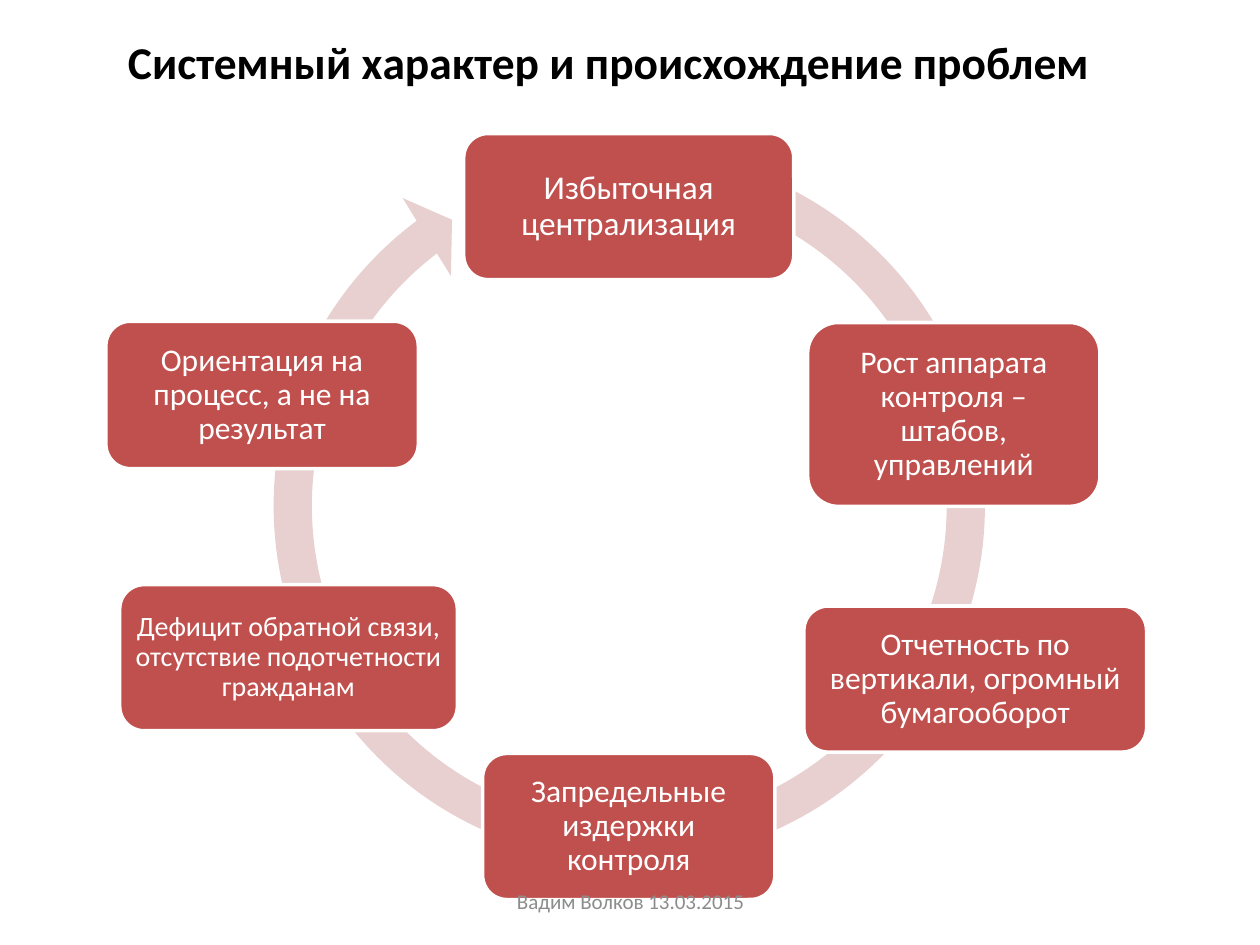
import pptx
import pptx.dml.color
import pptx.enum.shapes
import pptx.enum.text
import pptx.util

RGBColor = pptx.dml.color.RGBColor
ShapeType = pptx.enum.shapes.MSO_SHAPE
Alignment = pptx.enum.text.PP_ALIGN
Anchor = pptx.enum.text.MSO_ANCHOR

RED = RGBColor(0xC0, 0x50, 0x4D)
PALE_RED = RGBColor(0xE8, 0xD0, 0xD0)
WHITE = RGBColor(0xFF, 0xFF, 0xFF)
BLACK = RGBColor(0x00, 0x00, 0x00)
GRAY = RGBColor(0x8C, 0x8C, 0x8C)

FONT = "Calibri"
COLUMNS, ROWS = 100, 75
TITLE_ONLY_LAYOUT = 5

# Left, top, width, height in grid cells; font size; text. Clockwise from the top.
STAGES = [
    ((36.8, 10.6, 26.2, 11.6), 19, "Избыточная централизация"),
    ((64.1, 25.6, 23.2, 14.6), 18, "Рост аппарата контроля – штабов, управлений"),
    ((63.8, 48.1, 27.2, 11.6), 18, "Отчетность по вертикали, огромный бумагооборот"),
    ((38.3, 59.8, 23.2, 11.6), 18, "Запредельные издержки контроля"),
    ((9.5, 46.4, 26.8, 11.6), 16, "Дефицит обратной связи, отсутствие подотчетности гражданам"),
    ((8.4, 25.5, 24.8, 11.7), 18, "Ориентация на процесс, а не на результат"),
]


def write_text(shape, text, *, size, color, bold=False, line_spacing=None, inset=None):
    frame = shape.text_frame
    frame.word_wrap = True
    frame.vertical_anchor = Anchor.MIDDLE
    if inset is not None:
        frame.margin_left = frame.margin_right = inset
        frame.margin_top = frame.margin_bottom = inset
    paragraph = frame.paragraphs[0]
    paragraph.alignment = Alignment.CENTER
    if line_spacing is not None:
        paragraph.line_spacing = line_spacing
    run = paragraph.add_run()
    run.text = text
    run.font.name = FONT
    run.font.size = pptx.util.Pt(size)
    run.font.bold = bold
    run.font.color.rgb = color


class CycleSlide:
    def __init__(self, presentation):
        self.slide = presentation.slides.add_slide(
            presentation.slide_layouts[TITLE_ONLY_LAYOUT])
        self.column = presentation.slide_width / COLUMNS
        self.row = presentation.slide_height / ROWS

    def place(self, left, top, width, height):
        """Turn grid cells into slide lengths."""
        return (round(left * self.column), round(top * self.row),
                round(width * self.column), round(height * self.row))

    def title(self, box, text):
        shape = self.slide.shapes.title
        shape.left, shape.top, shape.width, shape.height = self.place(*box)
        write_text(shape, text, size=26, color=BLACK, bold=True)
        shape.text_frame.auto_size = pptx.enum.text.MSO_AUTO_SIZE.SHAPE_TO_FIT_TEXT

    def filled_shape(self, kind, box, color):
        shape = self.slide.shapes.add_shape(kind, *self.place(*box))
        shape.shadow.inherit = False
        shape.fill.solid()
        shape.fill.fore_color.rgb = color
        shape.line.fill.background()
        return shape

    def ring(self, box, adjustments):
        shape = self.filled_shape(ShapeType.CIRCULAR_ARROW, box, PALE_RED)
        for index, value in enumerate(adjustments):
            shape.adjustments[index] = value

    def stage(self, box, size, text):
        shape = self.filled_shape(ShapeType.ROUNDED_RECTANGLE, box, RED)
        shape.line.color.rgb = WHITE
        shape.line.width = pptx.util.Pt(2)
        write_text(shape, text, size=size, color=WHITE, line_spacing=0.9,
                   inset=pptx.util.Pt(size * 0.3))

    def footer(self, box, text):
        shape = self.slide.shapes.add_textbox(*self.place(*box))
        write_text(shape, text, size=12, color=GRAY)


def main():
    presentation = pptx.Presentation()
    presentation.slide_width = pptx.util.Inches(10)
    presentation.slide_height = pptx.util.Inches(7.5)

    cycle = CycleSlide(presentation)
    cycle.title((0, 2.2, 97.5, 5.4), "Системный характер и происхождение проблем ")
    cycle.ring((19.6, 9.8, 60.7, 60.7), (0.05, 3.13, 139.8, 172.73, 0.06))
    for box, size, text in STAGES:
        cycle.stage(box, size, text)
    cycle.footer((34.2, 69.5, 31.7, 4), "Вадим Волков 13.03.2015")
    presentation.save("out.pptx")


if __name__ == "__main__":
    main()
